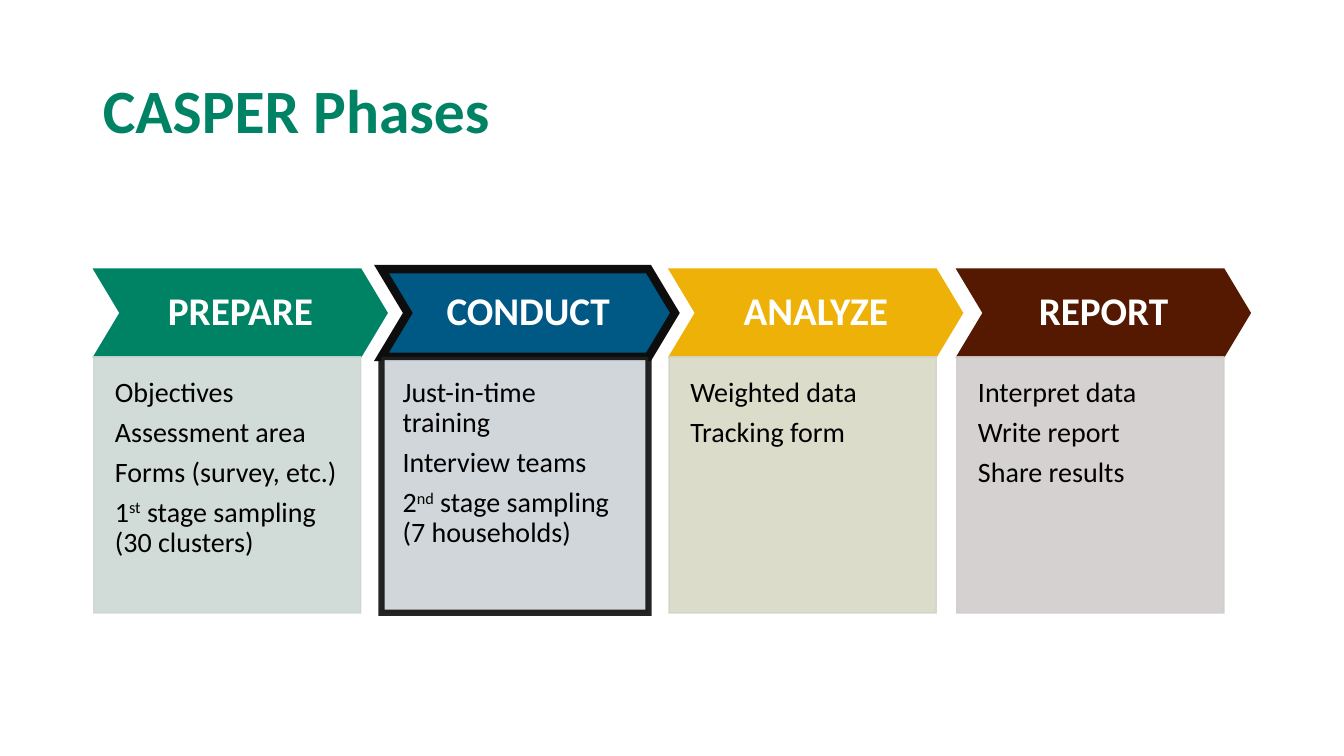
from dataclasses import dataclass

from pptx import Presentation
from pptx import util as u
from pptx.dml.color import RGBColor
from pptx.enum import shapes, text
from pptx.oxml.ns import qn
from lxml import etree

FONT = "Calibri"
GREEN = RGBColor(0x00, 0x83, 0x65)
BLUE = RGBColor(0x00, 0x59, 0x84)
YELLOW = RGBColor(0xEE, 0xB1, 0x07)
BROWN = RGBColor(0x54, 0x19, 0x00)
PALE_GREEN = RGBColor(0xCC, 0xD8, 0xD3)
PALE_BLUE = RGBColor(0xCB, 0xD2, 0xD7)
PALE_YELLOW = RGBColor(0xD9, 0xD9, 0xC5)
PALE_YELLOW_EDGE = RGBColor(0xD3, 0xD3, 0xCC)
PALE_BROWN = RGBColor(0xD1, 0xCD, 0xCC)
NEAR_BLACK = RGBColor(0x0D, 0x0D, 0x0D)
BLACK = RGBColor(0x00, 0x00, 0x00)
WHITE = RGBColor(0xFF, 0xFF, 0xFF)


@dataclass
class Phase:
    """One phase with its steps, colours and outlines."""
    name: str
    steps: list
    color: RGBColor
    pale: RGBColor
    head_line: tuple
    body_line: tuple


PHASES = [
    Phase("PREPARE",
          ["Objectives", "Assessment area", "Forms (survey, etc.)",
           "1^st^ stage sampling (30 clusters)"],
          GREEN, PALE_GREEN, (GREEN, 1), (PALE_GREEN, 1)),
    Phase("CONDUCT",
          ["Just-in-time training", "Interview teams",
           "2^nd^ stage sampling (7 households)"],
          BLUE, PALE_BLUE, (NEAR_BLACK, 6), (NEAR_BLACK, 4.5)),
    Phase("ANALYZE", ["Weighted data", "Tracking form"],
          YELLOW, PALE_YELLOW, (YELLOW, 1), (PALE_YELLOW_EDGE, 1)),
    Phase("REPORT", ["Interpret data", "Write report", "Share results"],
          BROWN, PALE_BROWN, (BROWN, 1), (PALE_BROWN, 1)),
]


def write_text(shape, lines, size, color, bold=False, align=text.PP_ALIGN.LEFT,
               anchor=text.MSO_ANCHOR.TOP, insets=(0.1, 0.05, 0.1, 0.05), after=0):
    """Write lines as paragraphs, raising the parts between carets."""
    frame = shape.text_frame
    frame.word_wrap = True
    frame.auto_size = text.MSO_AUTO_SIZE.NONE
    frame.vertical_anchor = anchor
    (frame.margin_left, frame.margin_top,
     frame.margin_right, frame.margin_bottom) = map(u.Inches, insets)
    for index, line in enumerate(lines):
        paragraph = frame.add_paragraph() if index else frame.paragraphs[0]
        paragraph.alignment = align
        paragraph.line_spacing = 0.9
        paragraph.space_before = u.Pt(0)
        paragraph.space_after = u.Pt(after)
        for part, words in enumerate(line.split("^")):
            run = paragraph.add_run()
            run.text = words
            run.font.name = FONT
            run.font.size = u.Pt(size)
            run.font.bold = bold
            run.font.color.rgb = color
            if part % 2:
                run.font._element.set("baseline", "30000")


def add_block(slide, kind, box, fill, line, opacity=100):
    """Add a filled preset shape with a mitred outline."""
    shape = slide.shapes.add_shape(kind, *map(u.Inches, box))
    shape.shadow.inherit = False
    shape.fill.solid()
    shape.fill.fore_color.rgb = fill
    line_color, width = line
    shape.line.color.rgb = line_color
    shape.line.width = u.Pt(width)
    properties = shape._element.spPr
    etree.SubElement(properties.find(qn("a:ln")), qn("a:miter"), lim="800000")
    if opacity < 100:
        for color in properties.iter(qn("a:srgbClr")):
            etree.SubElement(color, qn("a:alpha"), val=str(opacity * 1000))
    return shape


def add_title(slide, box, title):
    """Place and format the title placeholder."""
    shape = slide.shapes.title
    shape.left, shape.top, shape.width, shape.height = map(u.Inches, box)
    write_text(shape, [title], 44, GREEN, bold=True, anchor=text.MSO_ANCHOR.MIDDLE)


def add_phase(slide, box, phase):
    """Draw a chevron heading above its list of steps."""
    left, top, width, height = box
    head_height, notch = 0.87, 0.3
    head = add_block(slide, shapes.MSO_SHAPE.CHEVRON, (left, top, width, head_height),
                     phase.color, phase.head_line)
    head.adjustments[0] = notch
    write_text(head, [phase.name], 28, WHITE, bold=True, align=text.PP_ALIGN.CENTER,
               anchor=text.MSO_ANCHOR.MIDDLE, insets=(0.11,) * 4, after=9.8)
    body_box = (left, top + head_height, width - notch * head_height, height - head_height)
    body = add_block(slide, shapes.MSO_SHAPE.RECTANGLE, body_box,
                     phase.pale, phase.body_line, opacity=90)
    write_text(body, phase.steps, 20, BLACK, insets=(0.21, 0.21, 0.21, 0.42), after=7)


def add_phases(slide, box, phases):
    """Spread the phases evenly across the box."""
    left, top, width, height = box
    phase_width = 2.91
    pitch = (width - phase_width) / (len(phases) - 1)
    for index, phase in enumerate(phases):
        add_phase(slide, (left + index * pitch, top, phase_width, height), phase)


def main():
    """Build and save the slide."""
    presentation = Presentation()
    presentation.slide_width = u.Inches(13.33)
    presentation.slide_height = u.Inches(7.5)
    slide = presentation.slides.add_slide(presentation.slide_layouts[5])
    add_title(slide, (0.92, 0.4, 11.5, 1.45), "CASPER Phases")
    add_phases(slide, (0.93, 2.67, 11.47, 3.41), PHASES)
    presentation.save("out.pptx")


if __name__ == "__main__":
    main()
